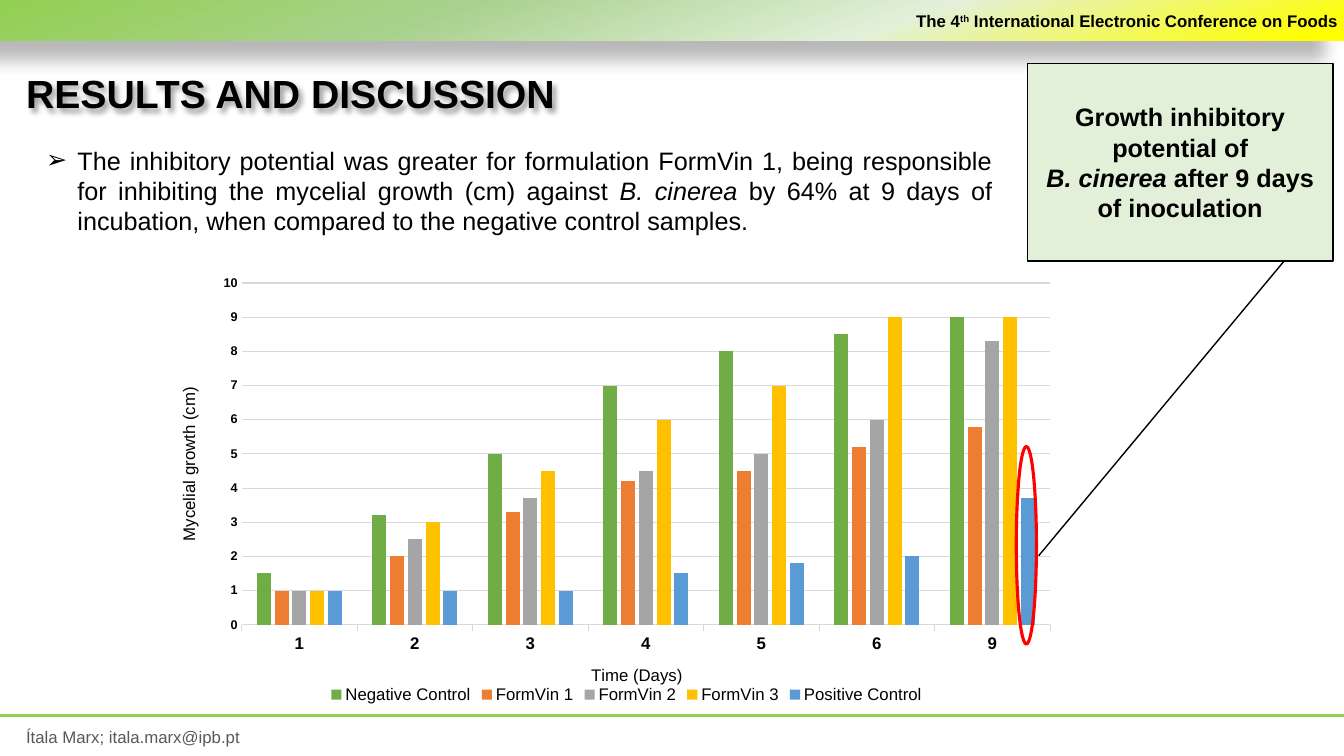
import pptx
import pptx.chart.data
import pptx.dml.color
import pptx.enum.chart
import pptx.enum.shapes
import pptx.enum.text
import pptx.oxml
import pptx.oxml.ns
import pptx.util

Inches = pptx.util.Inches
Pt = pptx.util.Pt
Shape = pptx.enum.shapes.MSO_SHAPE
Align = pptx.enum.text.PP_ALIGN
Anchor = pptx.enum.text.MSO_ANCHOR
NS = pptx.oxml.ns.nsdecls("a", "c")

FONT = "Arial"
BLACK, GRID, LIME, PALE = "000000", "D9D9D9", "92D050", "E2F0D9"
CONFERENCE = [[("The 4", ""), ("th", "super"), (" International Electronic Conference on Foods", "")]]
TITLE = [[("RESULTS AND DISCUSSION", "")]]
FINDING = [[
    ("The inhibitory potential was greater for formulation FormVin 1, being responsible "
     "for inhibiting the mycelial growth (cm) against ", ""),
    ("B. cinerea", "italic"),
    (" by 64% at 9 days of incubation, when compared to the negative control samples.", ""),
]]
CALLOUT = [
    [("Growth inhibitory potential of", "")],
    [("B. cinerea ", "italic"), ("after 9 days of inoculation", "")],
]
AUTHOR = [[("Ítala Marx; itala.marx@ipb.pt", "")]]
DAYS = ["1", "2", "3", "4", "5", "6", "9"]
GROWTH = [
    ("Negative Control", "70AD47", [1.5, 3.2, 5, 7, 8, 8.5, 9]),
    ("FormVin 1", "ED7D31", [1, 2, 3.3, 4.2, 4.5, 5.2, 5.8]),
    ("FormVin 2", "A5A5A5", [1, 2.5, 3.7, 4.5, 5, 6, 8.3]),
    ("FormVin 3", "FFC000", [1, 3, 4.5, 6, 7, 9, 9]),
    ("Positive Control", "5B9BD5", [1, 1, 1, 1.5, 1.8, 2, 3.7]),
]
HEADER_STOPS = [(0, LIME), (33, "A9D18E"), (66, PALE), (97, "FFFF00")]
PLOT = {"x": 0.12, "y": 0.117, "w": 0.798, "h": 0.711}


def paint(target, color):
    if hasattr(target, "solid"):
        target.solid()
        target = target.fore_color
    elif hasattr(target, "color"):
        target = target.color
    target.rgb = pptx.dml.color.RGBColor.from_string(color)


def style(font, size, bold=False, color=BLACK):
    font.name, font.size, font.bold = FONT, Pt(size), bold
    paint(font.color, color)


def box(left, top, width, height):
    return [Inches(n) for n in (left, top, width, height)]


def write(paragraphs, shape, size, bold=False, color=BLACK, align=Align.LEFT, anchor=Anchor.TOP):
    frame = shape.text_frame
    frame.word_wrap = True
    frame.vertical_anchor = anchor
    for number, pieces in enumerate(paragraphs):
        paragraph = frame.add_paragraph() if number else frame.paragraphs[0]
        paragraph.alignment = align
        for words, look in pieces:
            run = paragraph.add_run()
            run.text = words
            style(run.font, size, bold, color)
            if look == "italic":
                run.font.italic = True
            elif look == "super":
                run.font._element.set("baseline", "30000")
    return shape


def add_shadow(shape, alpha, blur, distance, angle):
    shape.shadow.inherit = False
    effects = shape._element.spPr.find(pptx.oxml.ns.qn("a:effectLst"))
    effects.append(pptx.oxml.parse_xml(
        f'<a:outerShdw {NS} blurRad="{Pt(blur)}" dist="{Pt(distance)}" dir="{angle * 60000}" '
        f'algn="ctr" rotWithShape="0"><a:srgbClr val="{BLACK}">'
        f'<a:alpha val="{alpha * 1000}"/></a:srgbClr></a:outerShdw>'))


def add_growth_chart(slide):
    data = pptx.chart.data.CategoryChartData()
    data.categories = DAYS
    for name, _, values in GROWTH:
        data.add_series(name, values)
    chart = slide.shapes.add_chart(
        pptx.enum.chart.XL_CHART_TYPE.COLUMN_CLUSTERED, *box(1.19, 2.25, 10.05, 4.77), data).chart
    style(chart.font, 10)
    chart.has_title = False
    chart.has_legend = True
    chart.legend.position = pptx.enum.chart.XL_LEGEND_POSITION.BOTTOM
    chart.legend.include_in_layout = False
    style(chart.legend.font, 12)

    plot = chart.plots[0]
    plot.gap_width, plot.overlap, plot.vary_by_categories = 219, -27, False
    for series, (_, color, _) in zip(plot.series, GROWTH):
        paint(series.format.fill, color)

    marks = pptx.enum.chart.XL_TICK_MARK
    for axis, label, size, tick in ((chart.category_axis, "Time (Days)", 12, marks.OUTSIDE),
                                    (chart.value_axis, "Mycelial growth (cm)", 9, marks.NONE)):
        style(axis.tick_labels.font, size, True)
        axis.major_tick_mark, axis.minor_tick_mark = tick, marks.NONE
        title = axis.axis_title.text_frame
        title.text = label
        style(title.paragraphs[0].runs[0].font, 12)
    values = chart.value_axis
    values.minimum_scale, values.maximum_scale, values.major_unit = 0, 10, 1
    values.format.line.fill.background()
    for line in (chart.category_axis.format.line, values.major_gridlines.format.line):
        paint(line, GRID)
        line.width = Pt(0.75)

    area = chart._chartSpace.chart.plotArea
    for old in area.findall(pptx.oxml.ns.qn("c:layout")):
        area.remove(old)
    sizes = "".join(f'<c:{key} val="{value}"/>' for key, value in PLOT.items())
    area.insert(0, pptx.oxml.parse_xml(
        f'<c:layout {NS}><c:manualLayout><c:layoutTarget val="inner"/>'
        f'<c:xMode val="edge"/><c:yMode val="edge"/>{sizes}</c:manualLayout></c:layout>'))


def add_header(slide):
    header = slide.shapes.add_shape(Shape.RECTANGLE, *box(0, 0, 13.33, 0.4))
    header.line.fill.background()
    header.fill.gradient()
    gradient = header._element.spPr.find(pptx.oxml.ns.qn("a:gradFill"))
    stops = "".join(f'<a:gs pos="{at * 1000}"><a:srgbClr val="{color}"/></a:gs>'
                    for at, color in HEADER_STOPS)
    gradient.getparent().replace(gradient, pptx.oxml.parse_xml(
        f'<a:gradFill {NS} rotWithShape="1"><a:gsLst>{stops}</a:gsLst>'
        f'<a:lin ang="{70 * 60000}" scaled="0"/></a:gradFill>'))
    add_shadow(header, 28, 11.8, 19.7, 141)


def main():
    deck = pptx.Presentation()
    deck.slide_width, deck.slide_height = Inches(13.33), Inches(7.5)
    slide = deck.slides.add_slide(deck.slide_layouts[6])
    shapes = slide.shapes

    add_growth_chart(slide)
    highlight = shapes.add_shape(Shape.OVAL, *box(10.08, 4.43, 0.2, 1.96))
    highlight.shadow.inherit = False
    highlight.fill.background()
    paint(highlight.line, "FF0000")
    highlight.line.width = Pt(2.25)

    footer = shapes.add_connector(pptx.enum.shapes.MSO_CONNECTOR.STRAIGHT,
                                  *box(0, 7.1, 13.33, 7.1))
    paint(footer.line, LIME)
    footer.line.width = Pt(2.25)
    footer._element.spPr.append(pptx.oxml.parse_xml(f"<a:effectLst {NS}/>"))
    write(AUTHOR, shapes.add_textbox(*box(0.16, 7.16, 2.93, 0.3)), 12, color="595959")

    add_header(slide)
    write(CONFERENCE, shapes.add_textbox(*box(6.49, 0.06, 6.88, 0.3)), 12, bold=True,
          align=Align.RIGHT)

    callout = shapes.add_shape(Shape.LINE_CALLOUT_1, *box(10.19, 0.63, 3.03, 1.96))
    for number, value in enumerate((0.999, 0.841, 2.492, 0.037)):
        callout.adjustments[number] = value
    callout.shadow.inherit = False
    paint(callout.fill, PALE)
    paint(callout.line, BLACK)
    callout.line.width = Pt(1)
    write(CALLOUT, callout, 18, bold=True, align=Align.CENTER, anchor=Anchor.MIDDLE)

    title = write(TITLE, shapes.add_textbox(*box(0.16, 0.64, 9.58, 0.57)), 28, bold=True,
                  anchor=Anchor.MIDDLE)
    title.fill.background()
    add_shadow(title, 40, 4, 3, 45)

    finding = write(FINDING, shapes.add_textbox(*box(0.36, 1.39, 9.58, 1.01)), 18,
                    align=Align.JUSTIFY)
    bullet = finding.text_frame.paragraphs[0]._p.get_or_add_pPr()
    bullet.set("marL", str(Inches(0.31)))
    bullet.set("indent", str(-Inches(0.31)))
    bullet.append(pptx.oxml.parse_xml(f'<a:buFont {NS} typeface="{FONT}"/>'))
    bullet.append(pptx.oxml.parse_xml(f'<a:buChar {NS} char="➢"/>'))

    deck.save("out.pptx")


if __name__ == "__main__":
    main()
